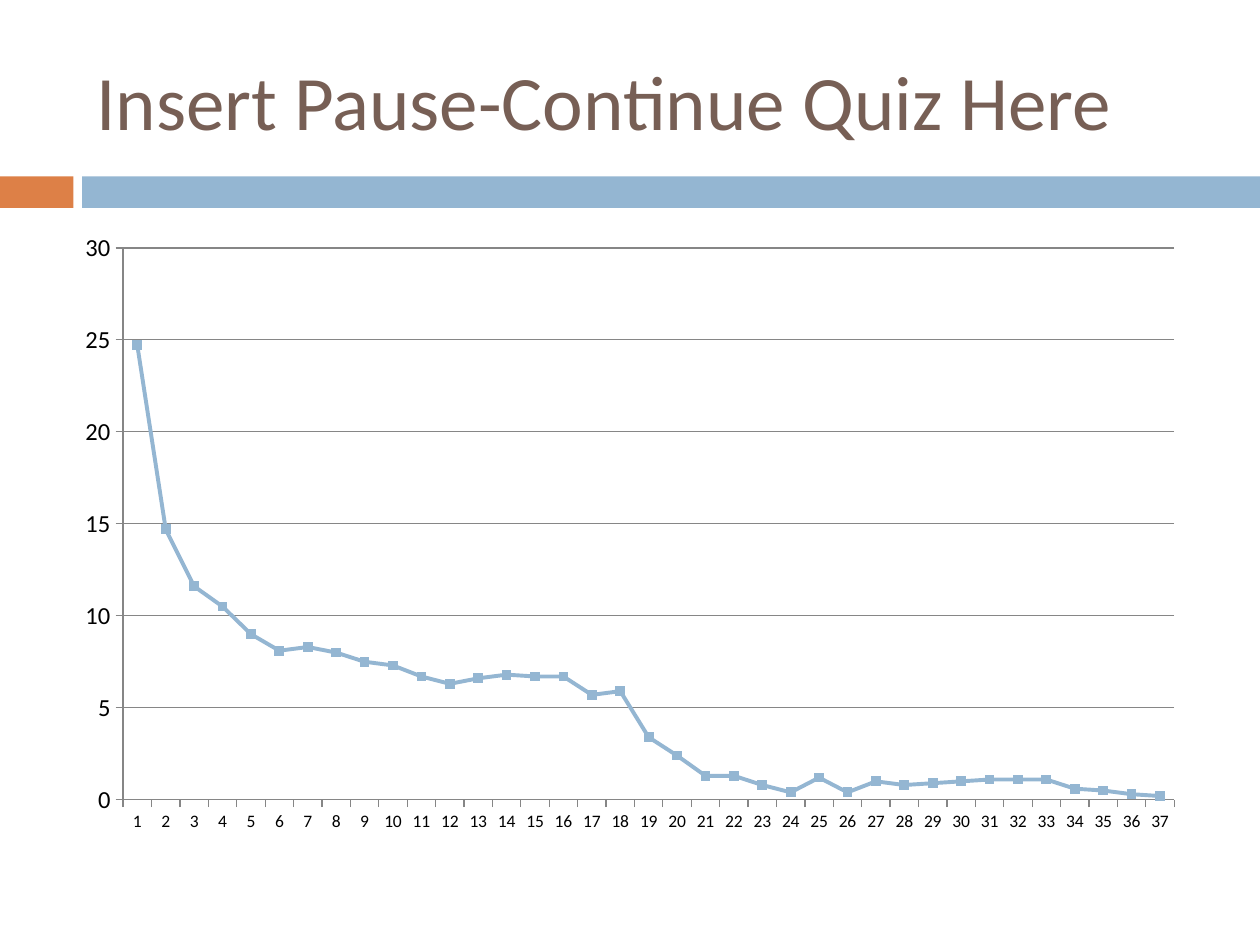
from dataclasses import dataclass

from lxml.etree import SubElement
from pptx import Presentation
from pptx.chart.data import CategoryChartData
from pptx.dml.color import RGBColor
from pptx.enum.chart import XL_CHART_TYPE, XL_MARKER_STYLE, XL_TICK_MARK
from pptx.enum.shapes import MSO_SHAPE
from pptx.enum.text import MSO_ANCHOR
from pptx.oxml.ns import qn
from pptx.util import Pt


@dataclass(frozen=True)
class Theme:
    font: str = "Calibri"
    title: RGBColor = RGBColor(0x77, 0x5F, 0x55)
    accent: RGBColor = RGBColor(0xDD, 0x80, 0x47)
    blue: RGBColor = RGBColor(0x94, 0xB6, 0xD2)
    text: RGBColor = RGBColor(0, 0, 0)
    grid: RGBColor = RGBColor(0x86, 0x86, 0x86)
    title_size: int = 44
    value_size: int = 14
    category_size: int = 10


THEME = Theme()
VALUES = [
    24.7, 14.7, 11.6, 10.5, 9, 8.1, 8.3, 8, 7.5, 7.3,
    6.7, 6.3, 6.6, 6.8, 6.7, 6.7, 5.7, 5.9, 3.4, 2.4,
    1.3, 1.3, 0.8, 0.4, 1.2, 0.4, 1, 0.8, 0.9, 1,
    1.1, 1.1, 1.1, 0.6, 0.5, 0.3, 0.2,
]


def add_title(slide, text, left, top, width, height):
    box = slide.shapes.add_textbox(Pt(left), Pt(top), Pt(width), Pt(height))
    tf = box.text_frame
    tf.word_wrap = True
    tf.vertical_anchor = MSO_ANCHOR.MIDDLE
    r = tf.paragraphs[0].add_run()
    r.text = text
    r.font.name = THEME.font
    r.font.size = Pt(THEME.title_size)
    r.font.color.rgb = THEME.title


def add_band(slide, left, top, width, height):
    """Draw a short accent block and a long bar, parted by a small gap."""
    block, gap = 42, 5
    bar = block + gap
    for x, w, color in ((left, block, THEME.accent),
                        (left + bar, width - bar, THEME.blue)):
        sp = slide.shapes.add_shape(
            MSO_SHAPE.RECTANGLE, Pt(x), Pt(top), Pt(w), Pt(height))
        sp.shadow.inherit = False
        sp.fill.solid()
        sp.fill.fore_color.rgb = color
        sp.line.fill.background()


def style_axis(axis, size):
    axis.major_tick_mark = XL_TICK_MARK.OUTSIDE
    axis.minor_tick_mark = XL_TICK_MARK.NONE
    axis.format.line.color.rgb = THEME.grid
    axis.format.line.width = Pt(0.75)
    axis.tick_labels.font.size = Pt(size)


def set_plot_layout(chart, **fractions):
    """Fix the inner plot area as fractions of the chart box."""
    plot_area = chart.plots[0]._element.getparent()
    layout = plot_area.find(qn("c:layout"))
    if layout is None:
        layout = plot_area.makeelement(qn("c:layout"))
        plot_area.insert(0, layout)
    manual = SubElement(layout, qn("c:manualLayout"))
    settings = {"layoutTarget": "inner", "xMode": "edge", "yMode": "edge", **fractions}
    for name, value in settings.items():
        SubElement(manual, qn(f"c:{name}")).set("val", str(value))


def add_line_chart(slide, values, left, top, width, height):
    data = CategoryChartData()
    data.categories = [str(n) for n in range(1, len(values) + 1)]
    data.add_series("Series 1", values)
    chart = slide.shapes.add_chart(
        XL_CHART_TYPE.LINE_MARKERS,
        Pt(left), Pt(top), Pt(width), Pt(height), data).chart
    chart.has_legend = False
    chart.has_title = False
    chart.font.name = THEME.font
    chart.font.size = Pt(THEME.category_size)
    chart.font.color.rgb = THEME.text

    style_axis(chart.category_axis, THEME.category_size)
    axis = chart.value_axis
    style_axis(axis, THEME.value_size)
    axis.minimum_scale, axis.maximum_scale, axis.major_unit = 0, 30, 5
    axis.has_major_gridlines = True
    axis.major_gridlines.format.line.color.rgb = THEME.grid
    axis.major_gridlines.format.line.width = Pt(0.75)

    plot = chart.plots[0]
    plot.vary_by_categories = False
    series = plot.series[0]
    series.smooth = False
    series.format.line.color.rgb = THEME.blue
    series.format.line.width = Pt(2.25)
    marker = series.marker
    marker.style = XL_MARKER_STYLE.SQUARE
    marker.size = 5
    marker.format.fill.solid()
    marker.format.fill.fore_color.rgb = THEME.blue
    marker.format.line.color.rgb = THEME.blue
    set_plot_layout(chart, x=0.053, y=0.044, w=0.927, h=0.885)


def main():
    prs = Presentation()
    prs.slide_width, prs.slide_height = Pt(720), Pt(540)
    s = prs.slides.add_slide(prs.slide_layouts[6])
    add_band(s, 0, 100.8, 720, 18)
    add_title(s, "Insert Pause-Continue Quiz Here", 48, 18, 642, 78)
    add_line_chart(s, VALUES, 36, 126, 648, 356.4)
    prs.save("out.pptx")


if __name__ == "__main__":
    main()
